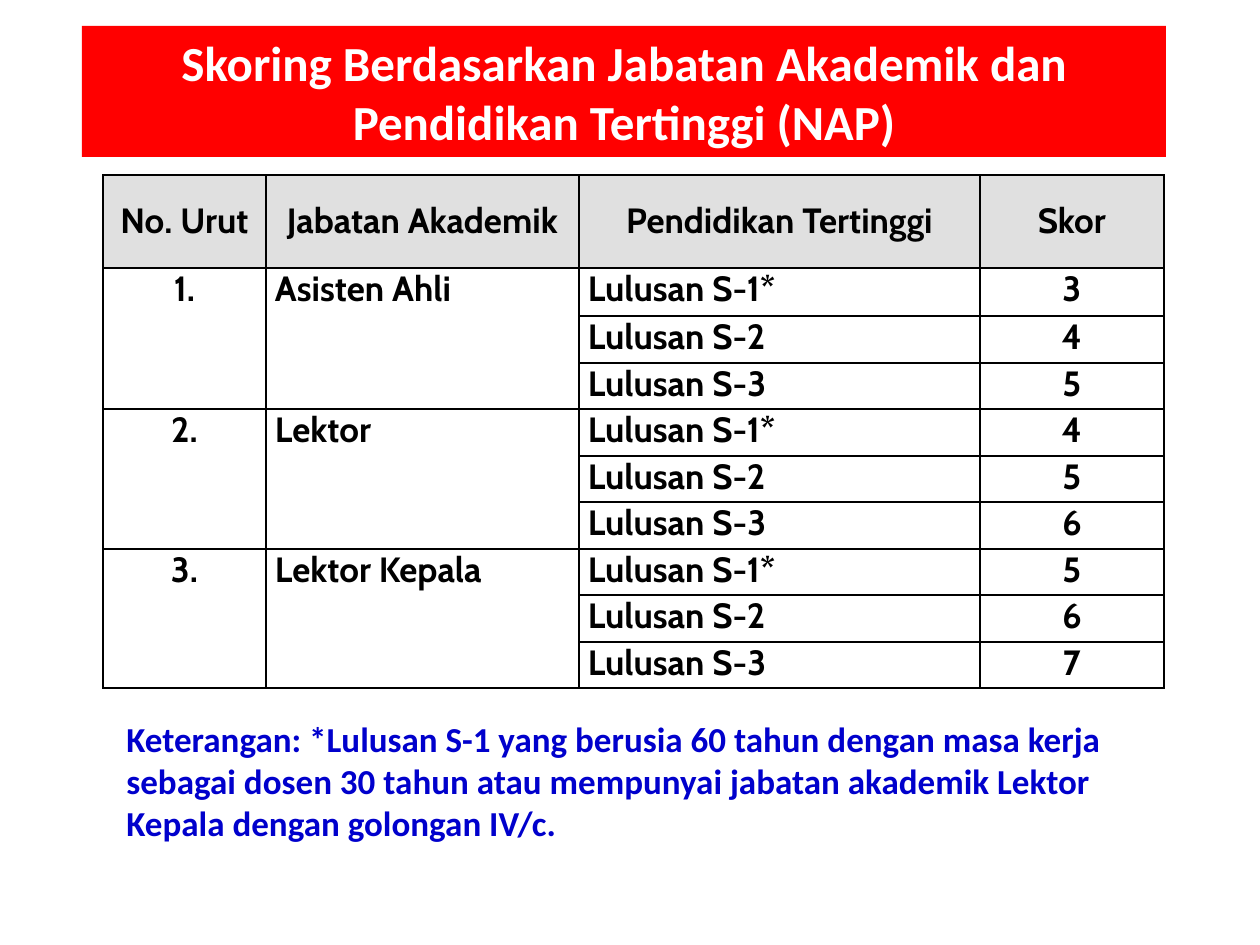
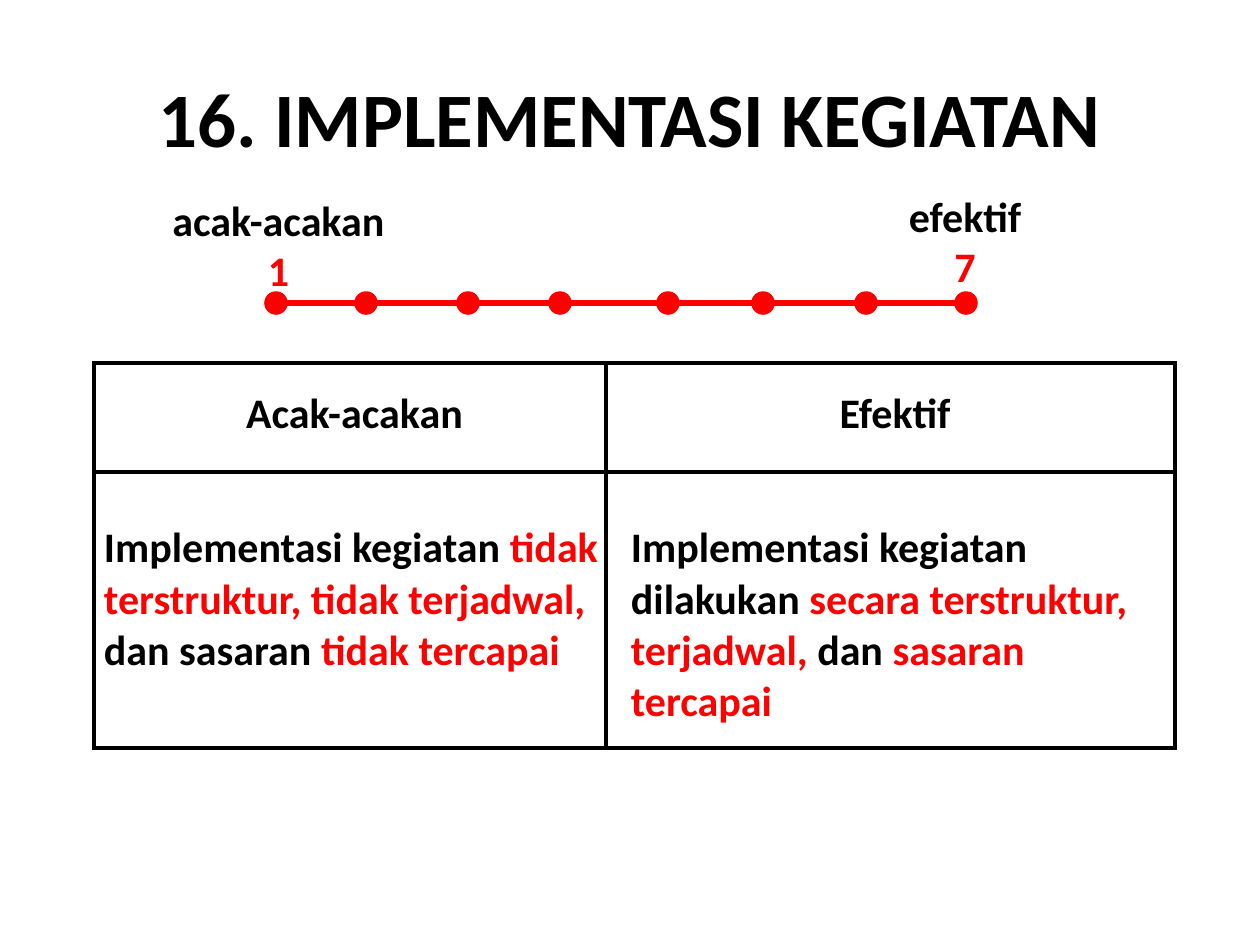
from lxml.etree import SubElement
from pptx import Presentation
from pptx.dml.color import RGBColor
from pptx.enum.shapes import MSO_CONNECTOR, MSO_SHAPE
from pptx.enum.text import MSO_ANCHOR, MSO_AUTO_SIZE, PP_ALIGN
from pptx.oxml import parse_xml
from pptx.oxml.ns import nsdecls, qn
from pptx.util import Emu, Pt

PX_PER_INCH = 126
COLORS = {
    "black": "000000",
    "white": "FFFFFF",
    "red": "FF0000",
    "blue": "0000CC",
    "header": "E0E0E0",
}
CENTER, LEFT = PP_ALIGN.CENTER, PP_ALIGN.LEFT


def px(value):
    return Emu(round(value * 914400 / PX_PER_INCH))


def color(name):
    return RGBColor.from_string(COLORS[name])


def set_values(target, values):
    for name, value in values.items():
        setattr(target, name, value)


def write_paragraph(para, spans, size, font="Calibri", **layout):
    set_values(para, layout)
    for text, tint in spans:
        span = para.add_run()
        span.text = text
        set_values(span.font, {"name": font, "size": Pt(size), "bold": True})
        span.font.color.rgb = color(tint)


def set_title(page, text, size, tint="black", area=(63, 38, 1134, 158), fill=None):
    title = page.shapes.title
    places = ("left", "top", "width", "height")
    set_values(title, dict(zip(places, map(px, area))))
    if fill:
        title.fill.solid()
        title.fill.fore_color.rgb = color(fill)
    set_values(title.text_frame, {
        "auto_size": MSO_AUTO_SIZE.NONE,
        "vertical_anchor": MSO_ANCHOR.MIDDLE,
        "word_wrap": True,
    })
    write_paragraph(title.text_frame.paragraphs[0], [(text, tint)], size, alignment=CENTER)


def add_text(page, area, lines, size, alignment=LEFT, wrap=True):
    box = page.shapes.add_textbox(*map(px, area))
    frame = box.text_frame
    frame.word_wrap = wrap
    for index, line in enumerate(lines):
        para = frame.add_paragraph() if index else frame.paragraphs[0]
        write_paragraph(para, [line], size, alignment=alignment)


def add_grid(page, left, top, widths, heights):
    frame = page.shapes.add_table(
        len(heights), len(widths), px(left), px(top), px(sum(widths)), px(sum(heights))
    )
    table = frame.table
    set_values(table, {"first_row": False, "horz_banding": False})
    for column, width in zip(table.columns, widths):
        column.width = px(width)
    for row, height in zip(table.rows, heights):
        row.height = px(height)
    return table


def style_cell(cell, border, margins, fill=None, anchor=MSO_ANCHOR.TOP):
    sides = ("margin_left", "margin_top", "margin_right", "margin_bottom")
    set_values(cell, dict(zip(sides, map(px, margins))))
    cell.vertical_anchor = anchor
    if fill:
        cell.fill.solid()
        cell.fill.fore_color.rgb = color(fill)
    else:
        cell.fill.background()
    properties = cell._tc.get_or_add_tcPr()
    for index, side in enumerate(("lnL", "lnR", "lnT", "lnB")):
        properties.insert(index, parse_xml(
            f'<a:{side} {nsdecls("a")} w="{Pt(border)}"><a:solidFill>'
            f'<a:srgbClr val="{COLORS["black"]}"/></a:solidFill></a:{side}>'
        ))


def add_score_table(page):
    headers = ("No. Urut", "Jabatan Akademik", "Pendidikan Tertinggi", "Skor")
    ranks = ("Asisten Ahli", "Lektor", "Lektor Kepala")
    degrees = ("Lulusan S-1*", "Lulusan S-2", "Lulusan S-3")
    alignments = (CENTER, LEFT, LEFT, CENTER)
    table = add_grid(page, 103, 175, (163, 313, 401, 184), [93, 48] + [47, 46] * 4)
    for row_index, row in enumerate(table.rows):
        for cell in row.cells:
            if row_index:
                style_cell(cell, 1, (9, 0, 9, 0))
            else:
                style_cell(cell, 1, (9, 0, 9, 0), "header", MSO_ANCHOR.MIDDLE)

    def write(row, column, text, alignment):
        para = table.cell(row, column).text_frame.paragraphs[0]
        write_paragraph(para, [(text, "black")], 20, "Cabin", alignment=alignment)

    for column, header in enumerate(headers):
        write(0, column, header, CENTER)
    for group, rank in enumerate(ranks):
        first = 1 + group * len(degrees)
        for column, text in enumerate((f"{group + 1}.", rank)):
            last = table.cell(first + len(degrees) - 1, column)
            table.cell(first, column).merge(last)
            write(first, column, text, alignments[column])
        for step, degree in enumerate(degrees):
            write(first + step, 2, degree, alignments[2])
            write(first + step, 3, str(3 + group + step), alignments[3])


def add_comparison_table(page):
    columns = (
        ("Acak-acakan", 10, [
            ("Implementasi kegiatan ", "black"),
            ("tidak terstruktur, tidak terjadwal, ", "red"),
            ("dan sasaran ", "black"),
            ("tidak tercapai", "red"),
        ]),
        ("Efektif", 25, [
            ("Implementasi kegiatan dilakukan ", "black"),
            ("secara terstruktur, terjadwal, ", "red"),
            ("dan ", "black"),
            ("sasaran tercapai", "red"),
        ]),
    )
    table = add_grid(page, 94, 363, (512, 569), (109, 276))
    for column, (header, indent, spans) in enumerate(columns):
        head, body = table.cell(0, column), table.cell(1, column)
        style_cell(head, 2.25, (9, 0, 0, 0), "white")
        style_cell(body, 2.25, (indent, 51, 0, 0), "white")
        write_paragraph(head.text_frame.paragraphs[0], [(header, "black")], 24,
                        alignment=CENTER, line_spacing=1.5)
        write_paragraph(body.text_frame.paragraphs[0], spans, 24)


def add_scale(page, centers, middle, diameter=20):
    line = page.shapes.add_connector(
        MSO_CONNECTOR.STRAIGHT, px(centers[0]), px(middle), px(centers[-1]), px(middle)
    )
    line.line.color.rgb = color("red")
    line.line.width = Pt(3)
    SubElement(line._element.spPr, qn("a:effectLst"))
    for center in centers:
        dot = page.shapes.add_shape(
            MSO_SHAPE.FLOWCHART_CONNECTOR, px(center - diameter / 2),
            px(middle - diameter / 2), px(diameter), px(diameter)
        )
        dot.shadow.inherit = False
        dot.fill.solid()
        dot.fill.fore_color.rgb = color("red")
        dot.line.color.rgb = color("red")
        dot.line.width = Pt(2)


def build_scoring(page):
    set_title(page, "Skoring Berdasarkan Jabatan Akademik dan Pendidikan Tertinggi (NAP)",
              28, "white", (82, 26, 1084, 131), "red")
    add_score_table(page)
    note = ("Keterangan: *Lulusan S-1 yang berusia 60 tahun dengan masa kerja sebagai dosen "
            "30 tahun atau mempunyai jabatan akademik Lektor Kepala dengan golongan IV/c.")
    add_text(page, (114, 711, 1052, 140), [(note, "blue")], 20)


def build_implementation(page):
    set_title(page, "16. IMPLEMENTASI KEGIATAN", 44)
    add_comparison_table(page)
    add_scale(page, (276, 366, 468, 560, 668, 763, 866, 966), 303)
    for area, label, score in (
        ((158, 188, 241, 115), "acak-acakan", "1"),
        ((895, 184, 140, 115), "efektif", "7"),
    ):
        add_text(page, area, [(label, "black"), (score, "red")], 24, CENTER, wrap=False)


def main():
    deck = Presentation()
    deck.slide_width, deck.slide_height = px(1260), px(945)
    title_only = deck.slide_layouts[5]
    for build in (build_scoring, build_implementation):
        build(deck.slides.add_slide(title_only))
    deck.save("out.pptx")


if __name__ == "__main__":
    main()
